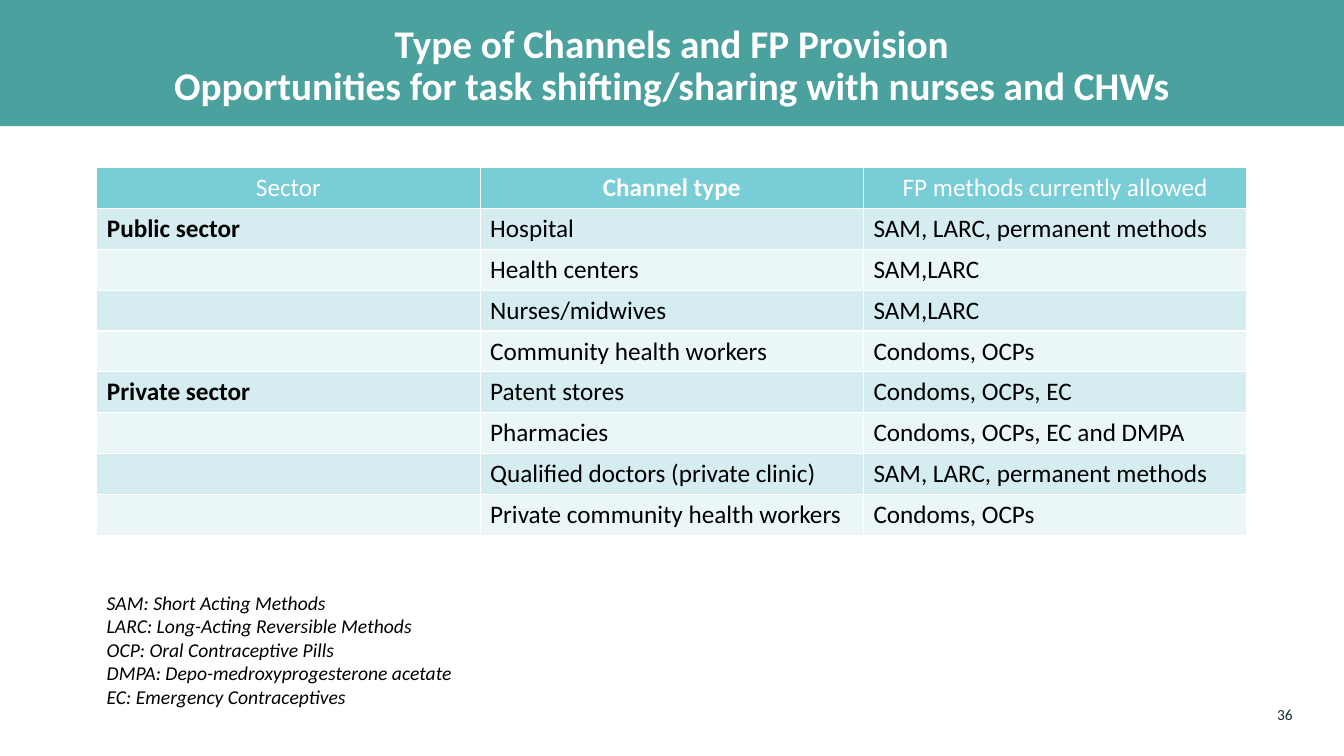
"""Build the slide on family planning channels and the methods each may provide."""
from dataclasses import dataclass

from pptx import Presentation
from pptx import util as u
from pptx.dml import color
from pptx.enum import shapes, text


@dataclass(frozen=True)
class Theme:
    font: str = "Calibri"
    white: str = "FFFFFF"
    black: str = "000000"
    navy: str = "112E38"
    teal: str = "4AA19E"
    header: str = "78CDD7"
    bands: tuple = ("D5EDF0", "EBF6F8")
    title_size: int = 28
    table_size: int = 18
    legend_size: int = 14
    number_size: int = 11


theme = Theme()


def style(paragraph, size, ink, bold=False, italic=False, align=text.PP_ALIGN.LEFT):
    paragraph.alignment = align
    font = paragraph.font
    font.name, font.size, font.bold, font.italic = theme.font, u.Pt(size), bold, italic
    font.color.rgb = color.RGBColor.from_string(ink)


def paint(fill, shade):
    fill.solid()
    fill.fore_color.rgb = color.RGBColor.from_string(shade)


prs = Presentation()
prs.slide_width, prs.slide_height = u.Cm(33.87), u.Cm(19.05)
slide = prs.slides.add_slide(prs.slide_layouts[5])

title = slide.shapes.title
banner = slide.shapes.add_shape(
    shapes.MSO_SHAPE.RECTANGLE, 0, 0, prs.slide_width, u.Cm(3.18))
banner.shadow.inherit = False
paint(banner.fill, theme.teal)
banner.line.fill.background()
title.element.addprevious(banner.element)

title.left, title.top, title.width, title.height = u.Cm(0.3), u.Cm(0.61), u.Cm(33.25), u.Cm(2.13)
title.text_frame.text = ("Type of Channels and FP Provision\v"
                         "Opportunities for task shifting/sharing with nurses and CHWs")
title.text_frame.vertical_anchor = text.MSO_ANCHOR.MIDDLE
heading = title.text_frame.paragraphs[0]
heading.line_spacing = 0.9
style(heading, theme.title_size, theme.white, bold=True, align=text.PP_ALIGN.CENTER)

channels = [
    ("Sector", "Channel type", "FP methods currently allowed"),
    ("Public sector", "Hospital", "SAM, LARC, permanent methods"),
    ("", "Health centers", "SAM,LARC"),
    ("", "Nurses/midwives", "SAM,LARC"),
    ("", "Community health workers", "Condoms, OCPs"),
    ("Private sector", "Patent stores", "Condoms, OCPs, EC"),
    ("", "Pharmacies", "Condoms, OCPs, EC and DMPA"),
    ("", "Qualified doctors (private clinic)", "SAM, LARC, permanent methods"),
    ("", "Private community health workers", "Condoms, OCPs"),
]
provision = slide.shapes.add_table(
    len(channels), 3, u.Cm(2.44), u.Cm(4.22), u.Cm(28.98), u.Cm(9.27)).table
for row, entries in enumerate(channels):
    for column, entry in enumerate(entries):
        cell = provision.cell(row, column)
        cell.text = entry
        label = cell.text_frame.paragraphs[0]
        if row == 0:
            paint(cell.fill, theme.header)
            style(label, theme.table_size, theme.white, bold=column == 1,
                  align=text.PP_ALIGN.CENTER)
        else:
            paint(cell.fill, theme.bands[(row - 1) % 2])
            style(label, theme.table_size, theme.black, bold=column == 0)

legend = slide.shapes.add_textbox(u.Cm(2.44), u.Cm(14.76), u.Cm(11.05), u.Cm(3.25)).text_frame
legend.word_wrap = True
legend.text = "\n".join([
    "SAM: Short Acting Methods",
    "LARC: Long-Acting Reversible Methods",
    "OCP: Oral Contraceptive Pills",
    "DMPA: Depo-medroxyprogesterone acetate",
    "EC: Emergency Contraceptives",
])
for abbreviation in legend.paragraphs:
    style(abbreviation, theme.legend_size, theme.black, italic=True)

page_number = slide.shapes.add_textbox(
    u.Cm(31.34), u.Cm(17.75), u.Cm(1.24), u.Cm(0.51)).text_frame
page_number.margin_left = page_number.margin_right = 0
page_number.margin_top = page_number.margin_bottom = 0
page_number.word_wrap = True
page_number.vertical_anchor = text.MSO_ANCHOR.MIDDLE
page_number.text = "36"
style(page_number.paragraphs[0], theme.number_size, theme.navy, align=text.PP_ALIGN.RIGHT)

prs.save("out.pptx")
